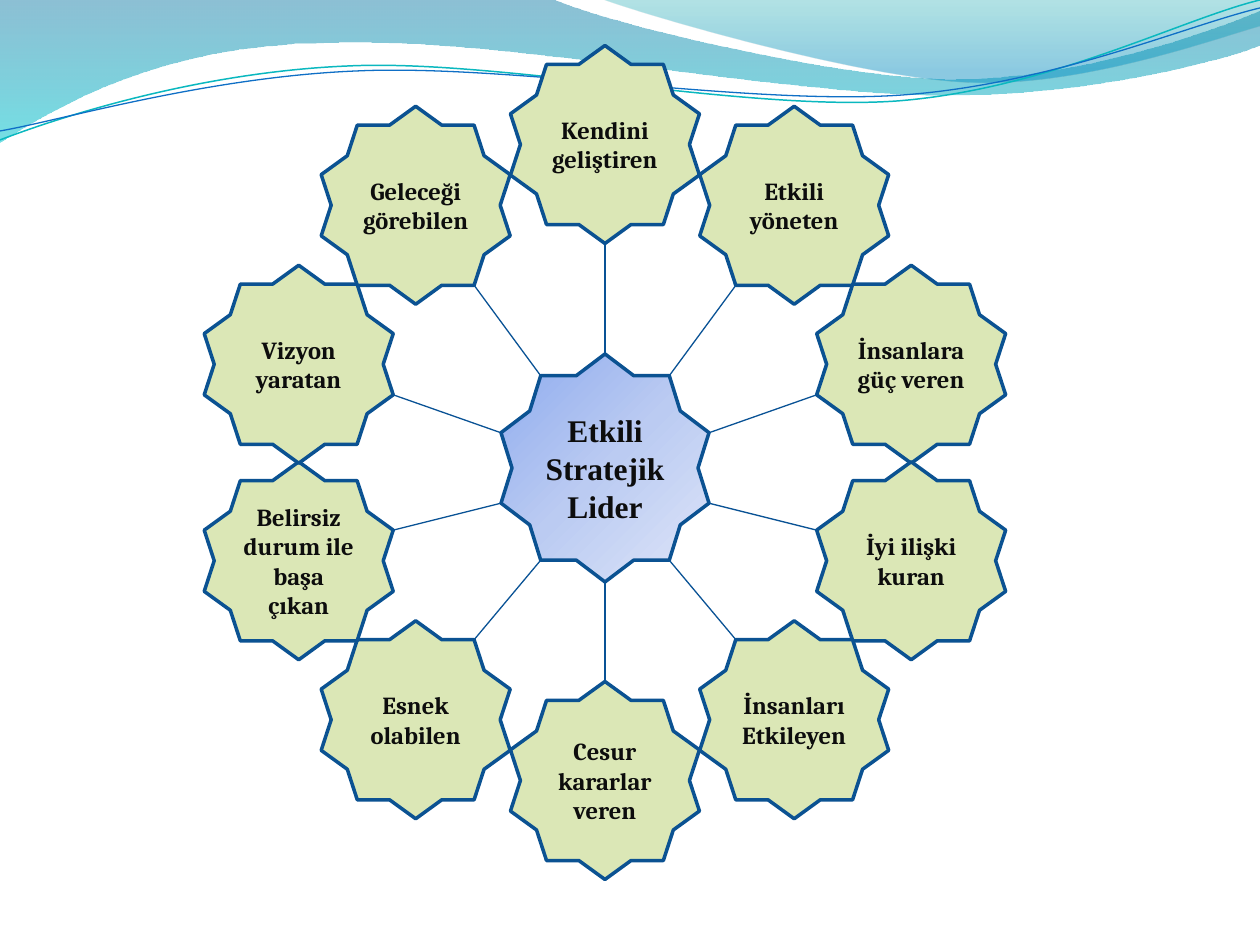
"""Draw a wheel of ten leadership traits around a hub, under a wavy header."""
from math import cos, pi, sin

from pptx import Presentation
from pptx.dml.color import RGBColor
from pptx.enum.shapes import MSO_CONNECTOR as LINE, MSO_SHAPE as SHAPE
from pptx.enum.text import MSO_ANCHOR as ANCHOR, PP_ALIGN as ALIGN
from pptx.oxml import parse_xml
from pptx.oxml.ns import nsdecls, qn
from pptx.util import Emu, Pt

SCALE = 914400 / 126


def px(*nums):
    return [Emu(round(n * SCALE)) for n in nums]


def paint(shape, fill=None, line=None, width=0, angle=90):
    shape.shadow.inherit = False
    shape.fill.background()
    shape.line.fill.background()
    if line:
        shape.line.color.rgb = RGBColor.from_string(line)
        shape.line.width = Pt(width)
    if isinstance(fill, str):
        shape.fill.solid()
        shape.fill.fore_color.rgb = RGBColor.from_string(fill)
    elif fill:
        stops = "".join(
            f'<a:gs pos="{at * 1000}"><a:srgbClr val="{tone}">'
            f'<a:alpha val="{alpha * 1000}"/></a:srgbClr></a:gs>'
            for at, tone, alpha in fill)
        props = shape.element.spPr
        props.replace(props.find(qn("a:noFill")), parse_xml(
            f'<a:gradFill {nsdecls("a")} rotWithShape="1"><a:gsLst>{stops}</a:gsLst>'
            f'<a:lin ang="{angle * 60000}" scaled="0"/></a:gradFill>'))


deck = Presentation()
deck.slide_width, deck.slide_height = px(1260, 945)
slide = deck.slides.add_slide(deck.slide_layouts[6])
shapes = slide.shapes

waves = [
    ((0, 0), [(554, 0), (600, 21, 837, 79, 955, 79), (1075, 79, 1207, 33, 1260, 11),
              (1260, 45), (1239, 55, 1096, 96, 940, 95), (784, 95, 481, 35, 324, 43),
              (163, 45, 58, 105, 0, 142)],
     {"fill": [(0, "0074A1", 45), (100, "00C6CF", 55)]}),
    ((604, 0), [(641, 14, 859, 78, 969, 82), (1079, 87, 1211, 40, 1260, 26), (1260, 0)],
     {"fill": [(0, "00A1A9", 30), (80, "008BBF", 45)]}),
    ((0, 140), [(60, 117, 199, 72, 349, 66), (498, 59, 747, 112, 898, 101),
                (1049, 89, 1182, 19, 1260, 0)],
     {"line": "0AB8BF", "width": 0.85}),
    ((0, 131), [(59, 121, 207, 77, 357, 71), (508, 64, 752, 106, 903, 95),
                (1053, 84, 1185, 26, 1260, 8)],
     {"line": "0F6FC6", "width": 0.75}),
]
for start, steps, look in waves:
    pen = shapes.build_freeform(*start, scale=SCALE)
    for step in steps:
        pen.add_line_segments(list(zip(step[::2], step[1::2])), close=False)
    if "fill" in look:
        pen.add_line_segments([], close=True)
    wave = pen.convert_to_shape()
    parts = iter(list(wave.element.iter(qn("a:lnTo"))))
    for step in steps:
        head = next(parts)
        if len(step) == 6:
            head.tag = qn("a:cubicBezTo")
            for part in (next(parts), next(parts)):
                head.append(part[0])
                part.getparent().remove(part)
    paint(wave, **look)

mid, hub_y, ring_y = 605, 468, 462
hub_w, hub_h, star_w, star_h = 208, 228, 189, 198
ring_w, ring_h = 322, 318
traits = ["Kendini geliştiren", "Etkili yöneten", "İnsanlara güç veren",
          "İyi ilişki kuran", "İnsanları Etkileyen", "Cesur kararlar veren",
          "Esnek olabilen", "Belirsiz durum ile başa çıkan", "Vizyon yaratan",
          "Geleceği\ngörebilen"]
turns = [n * 2 * pi / len(traits) for n in range(len(traits))]
spots = [(mid + ring_w * sin(t), ring_y + 0.5 - ring_h * cos(t)) for t in turns]

blue = [(0, "8EABEE", 100), (50, "BBCBF2", 100), (100, "DEE5F8", 100)]
hub_font = {"name": "Times New Roman", "size": Pt(18), "bold": True}
star_font = {"name": "Cambria", "size": Pt(14), "bold": True}
stars = [("Etkili Stratejik Lider", mid, hub_y, hub_w, hub_h, blue, hub_font)]
stars += [(text, x, y, star_w, star_h, "DBE7B6", star_font)
          for text, (x, y) in zip(traits, spots)]
for text, x, y, w, h, fill, style in stars:
    star = shapes.add_shape(SHAPE.STAR_10_POINT, *px(x - w / 2, y - h / 2, w, h))
    paint(star, fill, "0B5292", 2, 45)
    frame = star.text_frame
    frame.text = text
    frame.word_wrap = True
    frame.vertical_anchor = ANCHOR.MIDDLE
    for para in frame.paragraphs:
        para.alignment = ALIGN.CENTER
        for key, value in style.items():
            setattr(para.font, key, value)
        para.font.color.rgb = RGBColor.from_string("0D0D0D")

for turn, (x, y) in zip(turns, spots):
    across, up = sin(turn) / sin(0.4 * pi) / 2, cos(turn) / 2
    spoke = shapes.add_connector(LINE.STRAIGHT, *px(
        x - star_w * across, y + star_h * up,
        mid + hub_w * across, hub_y - hub_h * up))
    spoke.line.color.rgb = RGBColor.from_string("095295")
    spoke.line.width = Pt(0.75)
    spoke.element.spPr.append(parse_xml(f'<a:effectLst {nsdecls("a")}/>'))

deck.save("out.pptx")
